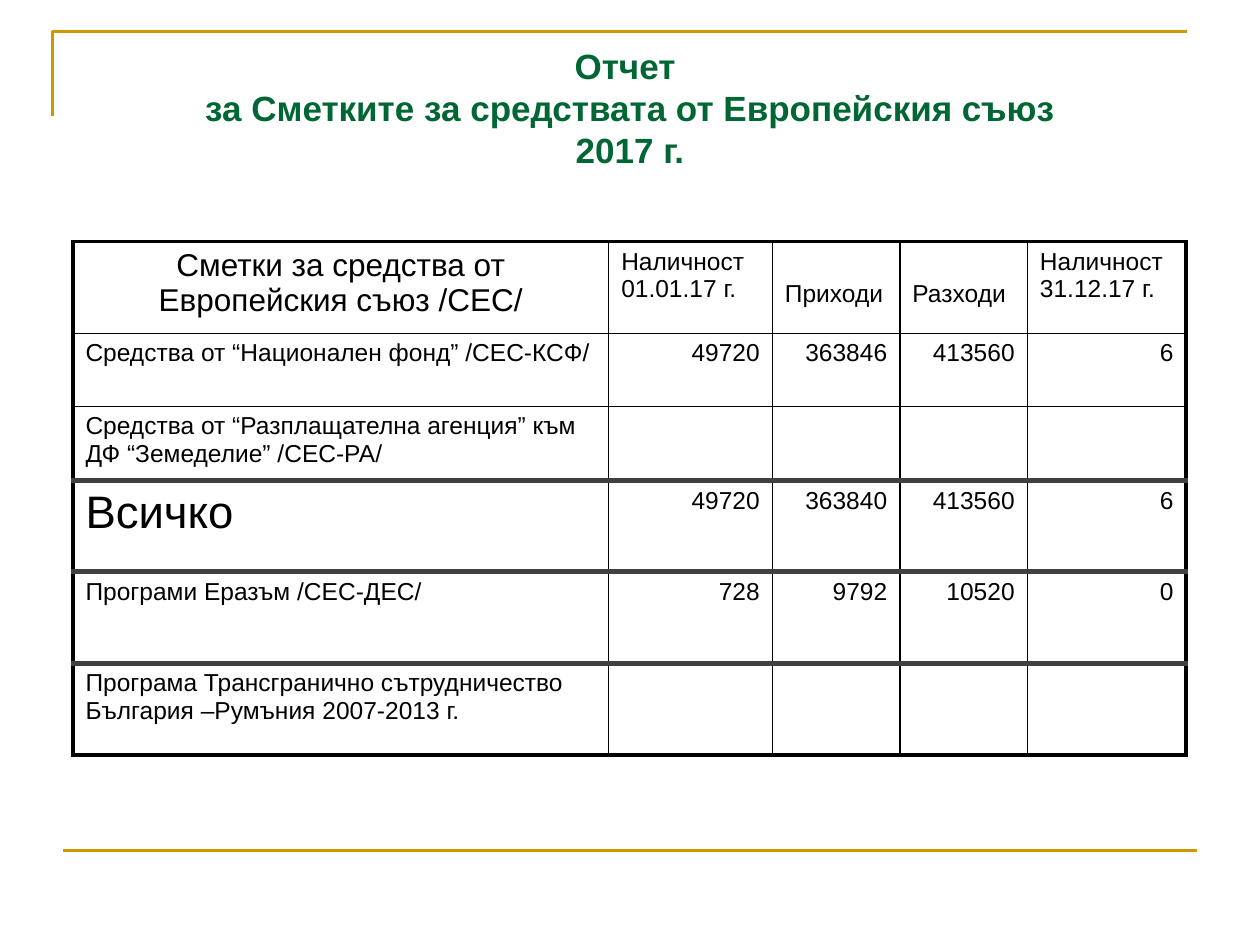
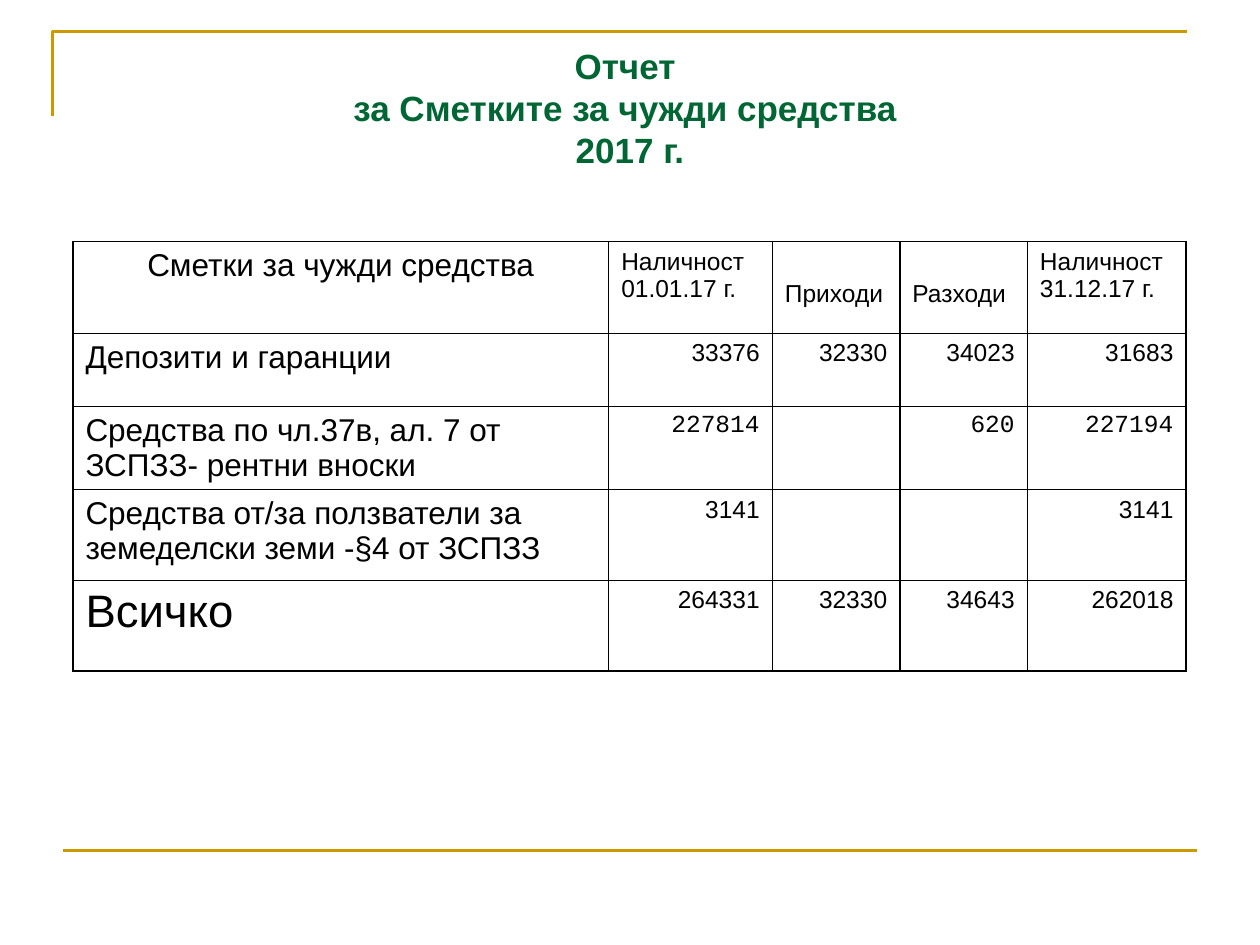
from lxml import etree
from pptx import Presentation
from pptx.dml.color import RGBColor
from pptx.enum.shapes import MSO_CONNECTOR
from pptx.enum.text import MSO_ANCHOR, MSO_AUTO_SIZE, PP_ALIGN
from pptx.oxml.ns import qn
from pptx.util import Cm, Pt

GOLD = RGBColor(0xCC, 0x99, 0x00)
GREEN = RGBColor(0x00, 0x66, 0x33)
BLACK = RGBColor(0x00, 0x00, 0x00)
GREY = RGBColor(0x40, 0x40, 0x40)

# Table rules: (width in points, colour)
THIN = (1, BLACK)
OUTER = (2.25, BLACK)
HEAVY = (3, GREY)

TITLE_BOX = (1.27, 0.76, 22.86, 2.62)
FRAME_BOX = (1.06, 0.64, 22.86, 1.7)
FOOTER_BOX = (1.27, 17.15, 22.86)
TABLE_ORIGIN = (1.47, 4.87)
COLUMN_WIDTHS = (10.8, 3.3, 2.57, 2.57, 3.2)
LOWERED_MARGIN = 0.77

HEADINGS = ("Наличност 01.01.17 г.", "Приходи", "Разходи",
            "Наличност 31.12.17 г.")
LOWERED_HEADINGS = ("Приходи", "Разходи")

# Account rows: label, label size, amounts, font of the amounts
EU_ACCOUNTS = (
    ("Средства от “Национален фонд” /СЕС-КСФ/", 14,
     ("49720", "363846", "413560", "6"), "Arial"),
    ("Средства от “Разплащателна агенция” към ДФ “Земеделие” /СЕС-РА/", 14,
     ("", "", "", ""), "Arial"),
    ("Всичко", 26, ("49720", "363840", "413560", "6"), "Arial"),
    ("Програми Еразъм /СЕС-ДЕС/", 14, ("728", "9792", "10520", "0"), "Arial"),
    ("Програма Трансгранично сътрудничество България –Румъния 2007-2013 г.",
     14, ("", "", "", ""), "Arial"),
)
DEPOSIT_ACCOUNTS = (
    ("Депозити и гаранции", 18, ("33376", "32330", "34023", "31683"), "Arial"),
    ("Средства по чл.37в, ал. 7 от ЗСПЗЗ- рентни вноски", 18,
     ("227814", "", "620", "227194"), "Courier New"),
    ("Средства от/за ползватели за земеделски земи -§4 от ЗСПЗЗ", 18,
     ("3141", "", "", "3141"), "Arial"),
    ("Всичко", 26, ("264331", "32330", "34643", "262018"), "Arial"),
)


def write(frame, text, size=14, font="Arial", color=BLACK, bold=False,
          align=PP_ALIGN.LEFT, line_spacing=None):
    paragraph = frame.paragraphs[0]
    paragraph.text = text
    paragraph.alignment = align
    paragraph.line_spacing = line_spacing
    for run in paragraph.runs:
        run.font.name = font
        run.font.size = Pt(size)
        run.font.bold = bold
        run.font.color.rgb = color


def style_gold_line(line):
    line.color.rgb = GOLD
    line.width = Pt(1.5)


def add_corner_frame(slide, left, top, width, height):
    """Draw the open corner that runs up the left side and along the top."""
    builder = slide.shapes.build_freeform(Cm(left), Cm(top + height))
    builder.add_line_segments(
        [(Cm(left), Cm(top)), (Cm(left + width), Cm(top))], close=False)
    corner = builder.convert_to_shape()
    corner.shadow.inherit = False
    corner.fill.background()
    style_gold_line(corner.line)


def add_footer_rule(slide, left, top, width):
    rule = slide.shapes.add_connector(
        MSO_CONNECTOR.STRAIGHT, Cm(left), Cm(top), Cm(left + width), Cm(top))
    etree.SubElement(rule.element.spPr, qn("a:effectLst"))
    style_gold_line(rule.line)


def set_title(slide, text, left, top, width, height):
    title = slide.shapes.title
    title.left, title.top = Cm(left), Cm(top)
    title.width, title.height = Cm(width), Cm(height)
    frame = title.text_frame
    frame.word_wrap = True
    frame.auto_size = MSO_AUTO_SIZE.NONE
    frame.vertical_anchor = MSO_ANCHOR.TOP
    write(frame, text, size=20, color=GREEN, bold=True,
          align=PP_ALIGN.CENTER, line_spacing=Pt(24))


def set_borders(cell, **rules):
    """Set the cell's rules, given in the order L, R, T, B."""
    properties = cell._tc.get_or_add_tcPr()
    for position, (side, (points, color)) in enumerate(rules.items()):
        border = etree.Element(qn(f"a:ln{side}"), w=str(Pt(points)))
        fill = etree.SubElement(border, qn("a:solidFill"))
        etree.SubElement(fill, qn("a:srgbClr"), val=str(color))
        properties.insert(position, border)


def add_accounts_table(slide, left, top, heading, accounts, row_heights,
                       row_rules, column_rules):
    """Build the table; the rules run from the first edge to the last."""
    table = slide.shapes.add_table(
        len(row_heights), len(COLUMN_WIDTHS), Cm(left), Cm(top),
        Cm(sum(COLUMN_WIDTHS)), Cm(sum(row_heights))).table
    table.first_row = table.horz_banding = False
    for column, width in zip(table.columns, COLUMN_WIDTHS):
        column.width = Cm(width)
    for row, height in zip(table.rows, row_heights):
        row.height = Cm(height)

    write(table.cell(0, 0).text_frame, heading, size=18,
          align=PP_ALIGN.CENTER)
    for c, name in enumerate(HEADINGS, start=1):
        cell = table.cell(0, c)
        write(cell.text_frame, name)
        if name in LOWERED_HEADINGS:
            cell.margin_top = Cm(LOWERED_MARGIN)

    for r, (label, size, amounts, font) in enumerate(accounts, start=1):
        write(table.cell(r, 0).text_frame, label, size=size)
        for c, amount in enumerate(amounts, start=1):
            write(table.cell(r, c).text_frame, amount, font=font,
                  align=PP_ALIGN.RIGHT)

    for r in range(len(row_heights)):
        for c in range(len(COLUMN_WIDTHS)):
            cell = table.cell(r, c)
            cell.fill.background()
            set_borders(cell, L=column_rules[c], R=column_rules[c + 1],
                        T=row_rules[r], B=row_rules[r + 1])


def add_report_slide(prs, title, **table_options):
    slide = prs.slides.add_slide(prs.slide_layouts.get_by_name("Title Only"))
    add_corner_frame(slide, *FRAME_BOX)
    add_footer_rule(slide, *FOOTER_BOX)
    set_title(slide, title, *TITLE_BOX)
    add_accounts_table(slide, *TABLE_ORIGIN, **table_options)


def main():
    prs = Presentation()
    prs.slide_width, prs.slide_height = Cm(25.4), Cm(19.05)
    add_report_slide(
        prs,
        "Отчет \vза Сметките за средствата от Европейския съюз\v2017 г.",
        heading="Сметки за средства от Европейския съюз /СЕС/",
        accounts=EU_ACCOUNTS,
        row_heights=(1.85, 1.47, 1.5, 1.83, 1.85, 1.85),
        row_rules=[OUTER, THIN, THIN, HEAVY, HEAVY, HEAVY, OUTER],
        column_rules=[OUTER] + [THIN] * 4 + [OUTER])
    add_report_slide(
        prs,
        "Отчет \vза Сметките за чужди средства \v2017 г.",
        heading="Сметки за чужди средства",
        accounts=DEPOSIT_ACCOUNTS,
        row_heights=(1.85, 1.47, 1.5, 1.83, 1.83),
        row_rules=[THIN] * 6,
        column_rules=[THIN] * 6)
    prs.save("out.pptx")


if __name__ == "__main__":
    main()
